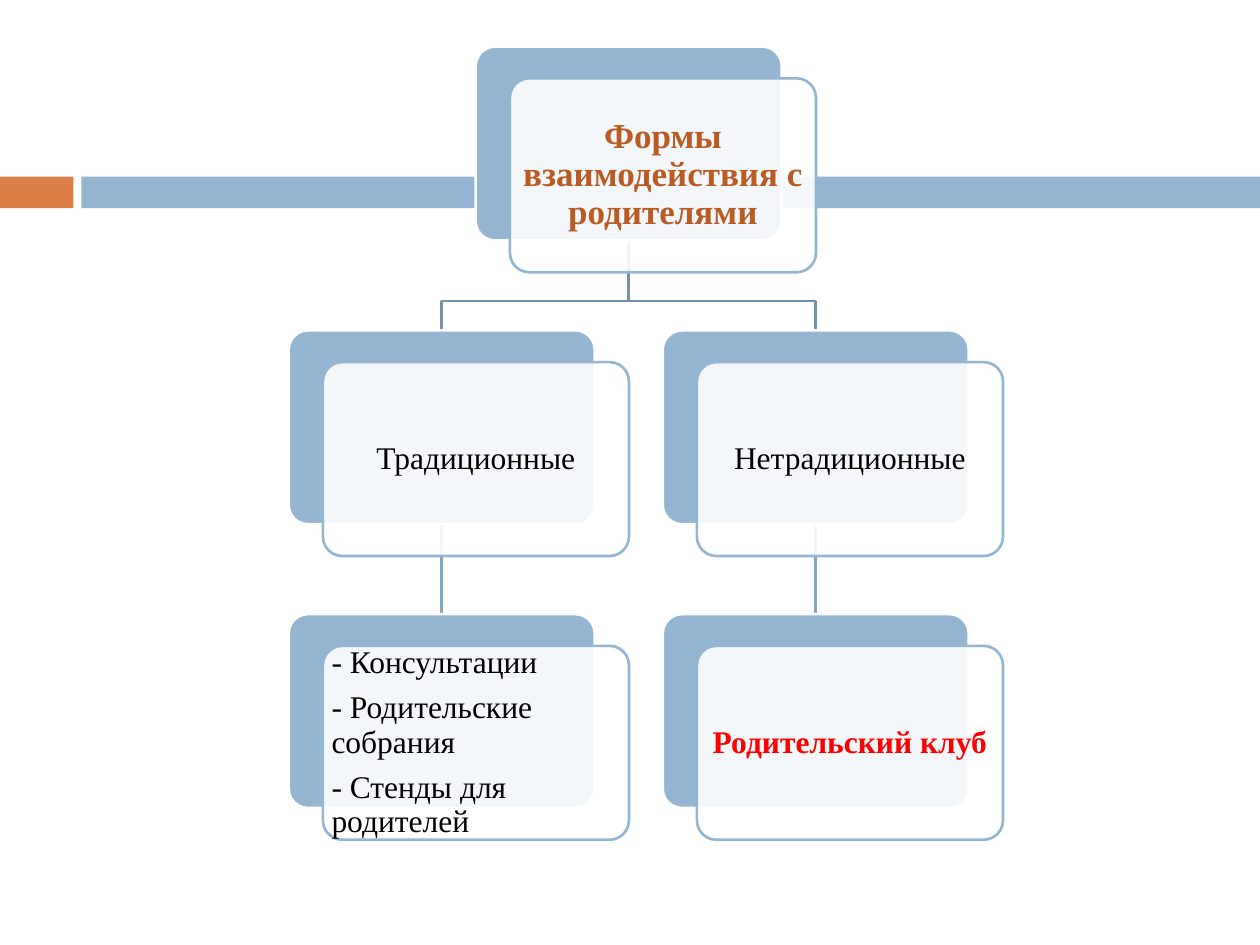
import dataclasses

import lxml.etree
import pptx
import pptx.dml.color
import pptx.enum.shapes
import pptx.enum.text
import pptx.oxml.ns
import pptx.util

Cm = pptx.util.Cm
Pt = pptx.util.Pt
SHAPES = pptx.enum.shapes.MSO_SHAPE
ALIGN = pptx.enum.text.PP_ALIGN


@dataclasses.dataclass(frozen=True)
class Theme:
    font: str = "Times New Roman"
    blue: str = "94B6D2"
    orange: str = "DD8047"
    white: str = "FFFFFF"
    title: str = "B95B22"
    text: str = "000000"
    accent: str = "FF0000"
    upper_link: str = "7792A8"
    lower_link: str = "86A5BF"
    title_size: int = 20
    text_size: int = 18
    line_width: float = 1.5


THEME = Theme()

# Card grid, in centimetres
CARD_WIDTH, CARD_HEIGHT = 6.17, 3.91
FRONT_SHIFT_X, FRONT_SHIFT_Y = 0.69, 0.64
GRID_LEFT, GRID_TOP = 5.82, 0.94
COLUMN_STEP, ROW_STEP = 7.54, 5.72
ELBOW_DROP = 1.22


def card_position(column, row):
    return GRID_LEFT + column * COLUMN_STEP, GRID_TOP + row * ROW_STEP


def top_middle(column, row):
    left, top = card_position(column, row)
    return left + CARD_WIDTH / 2, top


def bottom_middle(column, row):
    x, top = top_middle(column, row)
    return x, top + CARD_HEIGHT


def rgb(color):
    return pptx.dml.color.RGBColor.from_string(color)


def set_line(shape, color):
    shape.line.color.rgb = rgb(color)
    shape.line.width = Pt(THEME.line_width)


def set_opacity(shape, percent):
    color = shape.fill._xPr.find(".//" + pptx.oxml.ns.qn("a:srgbClr"))
    alpha = lxml.etree.SubElement(color, pptx.oxml.ns.qn("a:alpha"))
    alpha.set("val", str(percent * 1000))


def add_block(slide, kind, left, top, width, height, fill, line=None):
    shape = slide.shapes.add_shape(kind, Cm(left), Cm(top), Cm(width), Cm(height))
    shape.shadow.inherit = False
    shape.fill.solid()
    shape.fill.fore_color.rgb = rgb(fill)
    if line:
        set_line(shape, line)
    else:
        shape.line.fill.background()
    return shape


def add_rounded(slide, left, top, fill, line):
    shape = add_block(slide, SHAPES.ROUNDED_RECTANGLE, left, top,
                      CARD_WIDTH, CARD_HEIGHT, fill, line)
    shape.adjustments[0] = 0.1
    return shape


def write_text(shape, lines, size, color, bold, align, margin):
    frame = shape.text_frame
    frame.word_wrap = True
    frame.vertical_anchor = pptx.enum.text.MSO_ANCHOR.MIDDLE
    frame.margin_left = frame.margin_right = Cm(margin)
    frame.margin_top = frame.margin_bottom = Cm(margin)
    frame.text = "\n".join(lines)
    for paragraph in frame.paragraphs:
        paragraph.alignment = align
        paragraph.line_spacing = 0.9
        paragraph.space_after = Pt(0.35 * size)
        paragraph.font.name = THEME.font
        paragraph.font.size = Pt(size)
        paragraph.font.bold = bold
        paragraph.font.color.rgb = rgb(color)


def add_card(slide, column, row, lines, size=THEME.text_size, color=THEME.text,
             bold=False, align=ALIGN.CENTER, margin=0.06):
    """Draw a blue back card and a translucent front card; return the back one."""
    left, top = card_position(column, row)
    back = add_rounded(slide, left, top, THEME.blue, THEME.white)
    front = add_rounded(slide, left + FRONT_SHIFT_X, top + FRONT_SHIFT_Y,
                        THEME.white, THEME.blue)
    set_opacity(front, 90)
    write_text(front, lines, size, color, bold, align, margin)
    return back


def add_elbow(slide, start, end):
    bend = start[1] + ELBOW_DROP
    points = [(Cm(x), Cm(y)) for x, y in
              (start, (start[0], bend), (end[0], bend), end)]
    builder = slide.shapes.build_freeform(*points[0])
    builder.add_line_segments(points[1:], close=False)
    shape = builder.convert_to_shape()
    shape.shadow.inherit = False
    shape.fill.background()
    set_line(shape, THEME.upper_link)


def add_link(slide, start, end):
    connector = slide.shapes.add_connector(
        pptx.enum.shapes.MSO_CONNECTOR.STRAIGHT,
        Cm(start[0]), Cm(start[1]), Cm(end[0]), Cm(end[1]))
    set_line(connector, THEME.lower_link)
    properties = connector._element.spPr
    lxml.etree.SubElement(properties, pptx.oxml.ns.qn("a:effectLst"))
    return connector


def main():
    presentation = pptx.Presentation()
    presentation.slide_width, presentation.slide_height = Cm(25.4), Cm(19.05)
    slide = presentation.slides.add_slide(presentation.slide_layouts[6])

    # Decorative band
    add_block(slide, SHAPES.RECTANGLE, 0, 3.56, 1.48, 0.64, THEME.orange)
    add_block(slide, SHAPES.RECTANGLE, 1.64, 3.56, 23.76, 0.64, THEME.blue)

    # Links lie behind the cards
    links = []
    for column in (0, 1):
        add_elbow(slide, bottom_middle(0.5, 0), top_middle(column, 1))
        links.append(add_link(slide, bottom_middle(column, 1), top_middle(column, 2)))

    # Root card, centred over the two columns
    add_card(slide, 0.5, 0, ["Формы взаимодействия с родителями"],
             size=THEME.title_size, color=THEME.title, bold=True, margin=0.09)

    # Branches
    parents = [add_card(slide, column, 1, [name]) for column, name in
               enumerate(("Традиционные", "Нетрадиционные"))]
    children = [
        add_card(slide, 0, 2, ["- Консультации", "- Родительские собрания",
                               "- Стенды для родителей"], align=ALIGN.LEFT),
        add_card(slide, 1, 2, ["Родительский клуб"], color=THEME.accent, bold=True),
    ]
    for link, parent, child in zip(links, parents, children):
        link.begin_connect(parent, 2)
        link.end_connect(child, 0)

    presentation.save("out.pptx")


if __name__ == "__main__":
    main()
